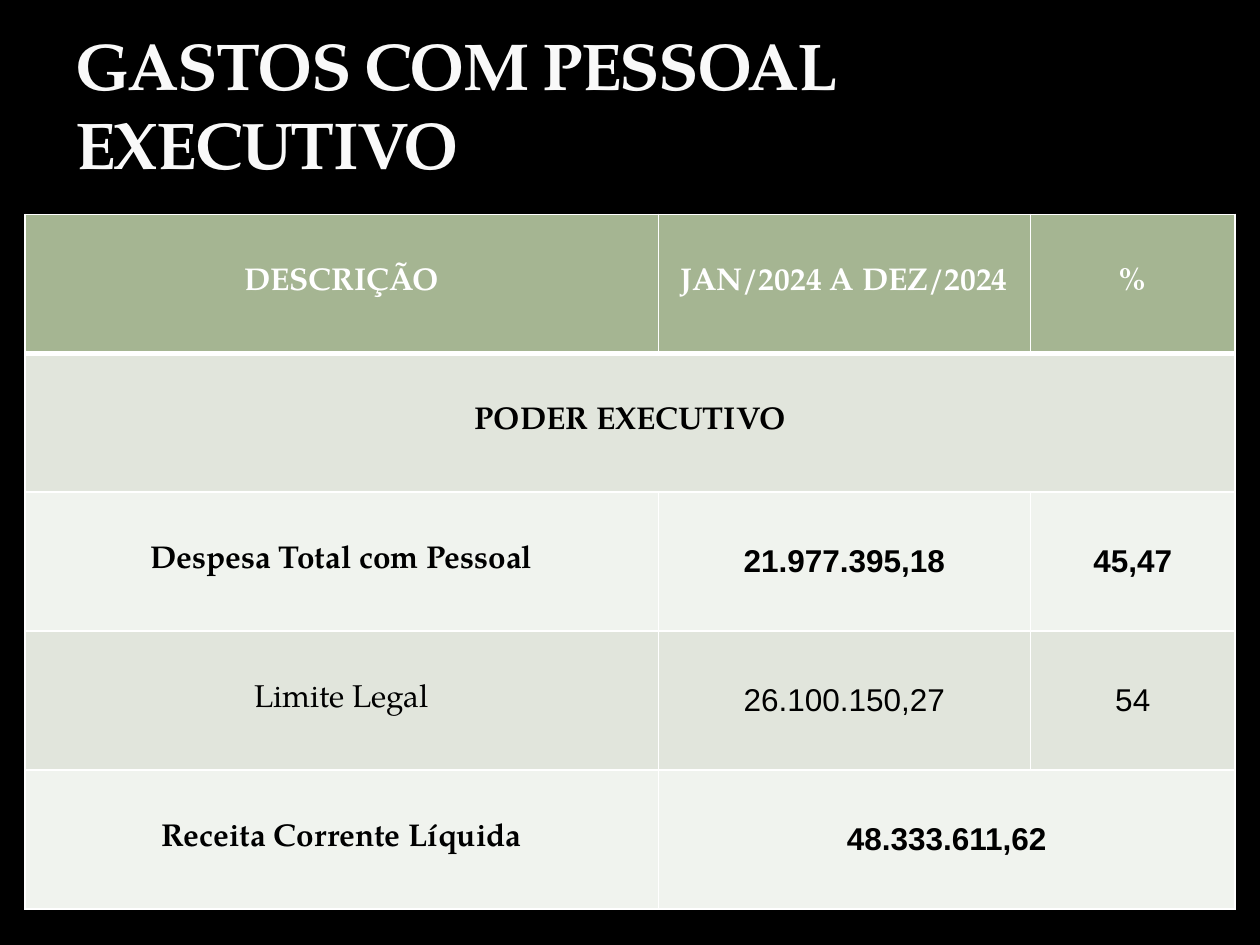
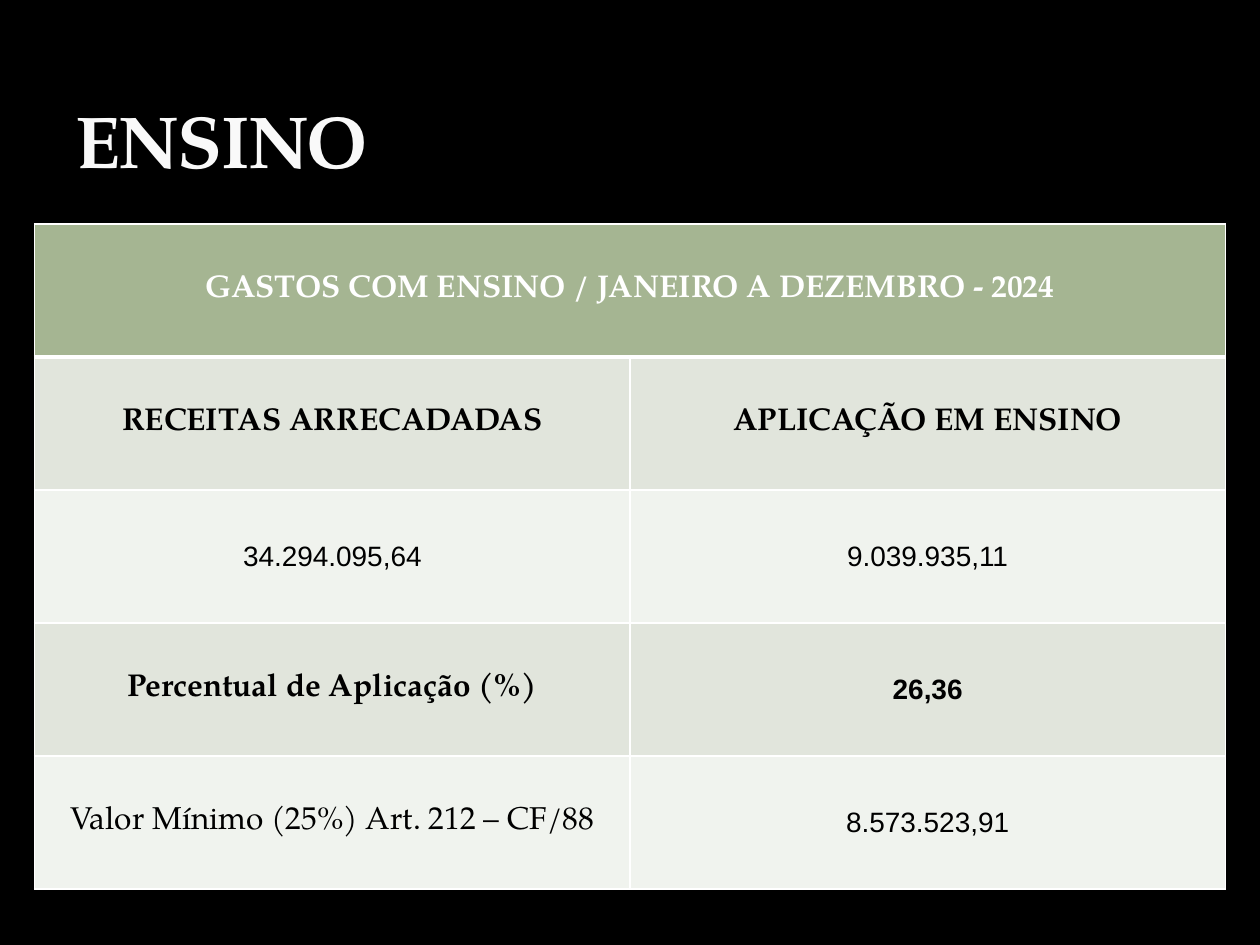
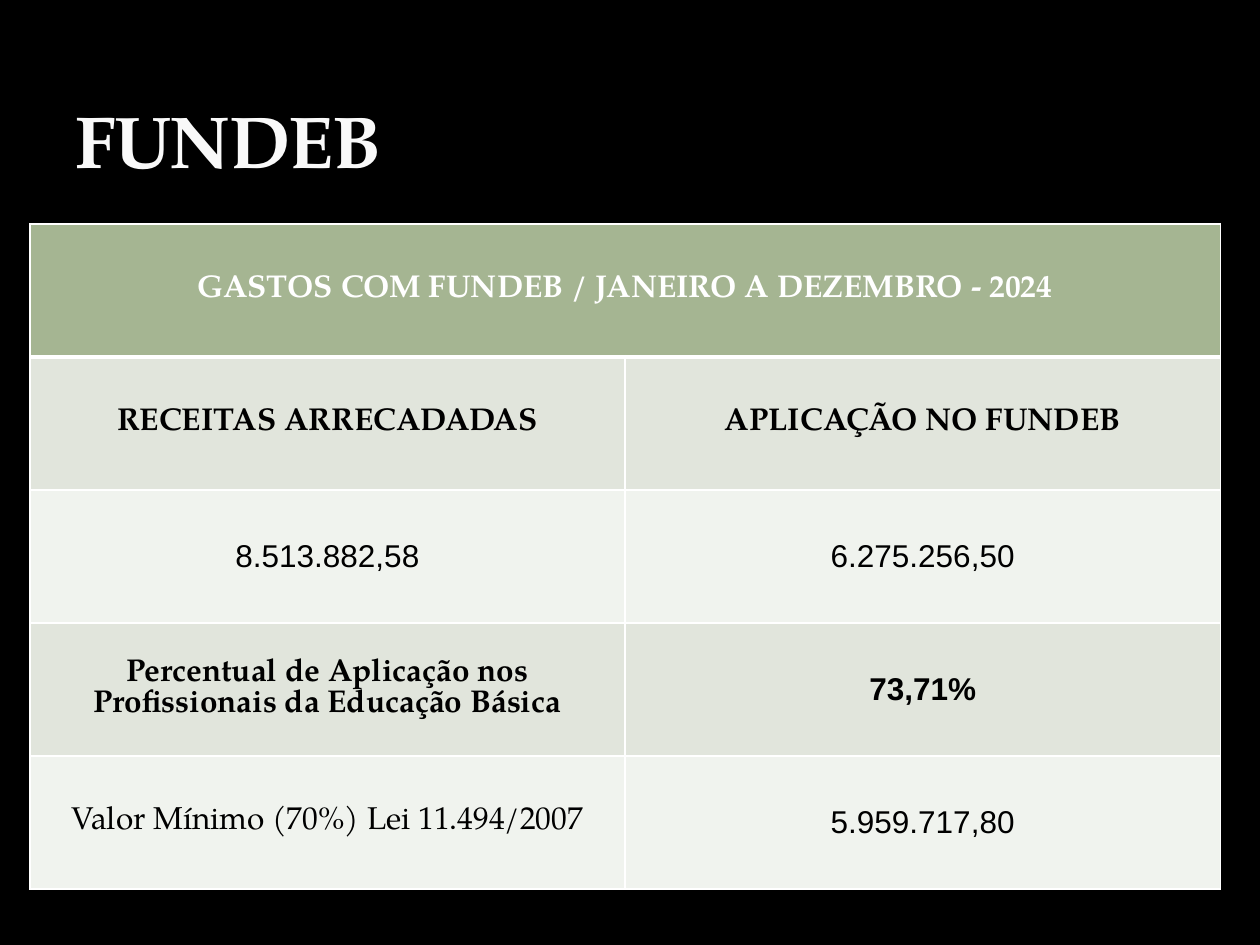
from dataclasses import dataclass

from pptx import Presentation
from pptx.dml.color import RGBColor as RGB
from pptx.enum.text import MSO_ANCHOR as Anchor, PP_ALIGN as Align
from pptx.oxml import parse_xml
from pptx.oxml.ns import nsdecls
from pptx.util import Cm, Pt


@dataclass(frozen=True)
class Theme:
    background: str = "000000"
    title: str = "F9F9F9"
    outline: str = "3C4422"
    header: str = "A5B592"
    bands: tuple = ("F0F3EE", "E1E5DC")
    light: str = "FFFFFF"
    dark: str = "000000"
    text_font: str = "TeX Gyre Pagella"
    number_font: str = "Arial"
    title_size: float = 42
    cell_size: float = 18
    rule: float = 1
    header_rule: float = 3


T = Theme()
SLIDE_SIZE = (25.4, 19.05)
TITLE_BOX = (1.27, 0.43, 22.86, 3.38)


def write(tf, text, size=T.cell_size, font=T.text_font, color=T.dark,
          bold=False, align=Align.LEFT, anchor=Anchor.MIDDLE):
    tf.word_wrap = True
    tf.vertical_anchor = anchor
    p = tf.paragraphs[0]
    p.alignment = align
    r = p.add_run()
    r.text = text
    r.font.size = Pt(size)
    r.font.name = font
    r.font.bold = bold
    r.font.color.rgb = RGB.from_string(color)
    return r


def add_title(s, box, text, size):
    tf = s.shapes.add_textbox(*map(Cm, box)).text_frame
    r = write(tf, text, size=size, color=T.title, bold=True, anchor=Anchor.BOTTOM)
    rPr = r.font._element
    rPr.set("spc", "-100")
    rPr.insert(0, parse_xml(
        f'<a:ln {nsdecls("a")} w="{Pt(0.25)}"><a:solidFill><a:srgbClr val="{T.outline}">'
        '<a:alpha val="25000"/></a:srgbClr></a:solidFill></a:ln>'))


def set_borders(cell, row):
    widths = {"L": T.rule, "R": T.rule,
              "T": T.header_rule if row == 1 else T.rule,
              "B": T.header_rule if row == 0 else T.rule}
    tcPr = cell._tc.get_or_add_tcPr()
    for side, width in widths.items():
        tcPr.append(parse_xml(
            f'<a:ln{side} {nsdecls("a")} w="{Pt(width)}"><a:solidFill>'
            f'<a:srgbClr val="{T.light}"/></a:solidFill></a:ln{side}>'))


def add_spending_table(s, box, col_widths, rows, bold_rows, number_size):
    left, top, width, height = map(Cm, box)
    tbl = s.shapes.add_table(len(rows), len(col_widths), left, top, width, height).table
    tbl.first_row = tbl.horz_banding = False
    for col, col_width in zip(tbl.columns, col_widths):
        col.width = Cm(col_width)
    for i, texts in enumerate(rows):
        tbl.rows[i].height = height // len(rows)
        for j in range(len(col_widths)):
            cell = tbl.cell(i, j)
            set_borders(cell, i)
            cell.fill.solid()
            cell.fill.fore_color.rgb = RGB.from_string(T.header if i == 0 else T.bands[i % 2])
        if len(texts) < len(col_widths):
            tbl.cell(i, len(texts) - 1).merge(tbl.cell(i, len(col_widths) - 1))
        for j, text in enumerate(texts):
            cell = tbl.cell(i, j)
            number = text[0].isdigit()
            write(cell.text_frame, text,
                  size=number_size if number else T.cell_size,
                  font=T.number_font if number else T.text_font,
                  color=T.light if i == 0 else T.dark,
                  bold=i in bold_rows, align=Align.CENTER)
            cell.vertical_anchor = Anchor.MIDDLE


def add_spending_slide(prs, title, box, col_widths, rows, bold_rows,
                       title_size=T.title_size, number_size=T.cell_size):
    s = prs.slides.add_slide(prs.slide_layouts[6])
    s.background.fill.solid()
    s.background.fill.fore_color.rgb = RGB.from_string(T.background)
    add_title(s, TITLE_BOX, title, title_size)
    add_spending_table(s, box, col_widths, rows, bold_rows, number_size)


def add_program_slide(prs, name, left, applied, income, spent, share_label, share,
                      minimum_label, minimum, number_size=T.cell_size):
    rows = [[f"GASTOS COM {name} / JANEIRO A DEZEMBRO - 2024"],
            ["RECEITAS ARRECADADAS", applied],
            [income, spent],
            [share_label, share],
            [minimum_label, minimum]]
    add_spending_slide(prs, name, (left, 4.52, 24, 13.4), (12, 12), rows,
                       bold_rows={0, 1, 3}, number_size=number_size)


def main():
    prs = Presentation()
    prs.slide_width, prs.slide_height = map(Cm, SLIDE_SIZE)
    add_spending_slide(
        prs, "GASTOS COM PESSOAL EXECUTIVO", (0.5, 4.32, 24.4, 14), (12.77, 7.5, 4.13),
        [["DESCRIÇÃO", "JAN/2024 A DEZ/2024", "%"],
         ["PODER EXECUTIVO"],
         ["Despesa Total com Pessoal", "21.977.395,18", "45,47"],
         ["Limite Legal", "26.100.150,27", "54"],
         ["Receita Corrente Líquida", "48.333.611,62"]],
        bold_rows={0, 1, 2, 4}, title_size=37.8)
    add_program_slide(
        prs, "ENSINO", 0.7, "APLICAÇÃO EM ENSINO", "34.294.095,64", "9.039.935,11",
        "Percentual de Aplicação (%)", "26,36",
        "Valor Mínimo (25%) Art. 212 – CF/88", "8.573.523,91", number_size=16)
    add_program_slide(
        prs, "FUNDEB", 0.6, "APLICAÇÃO NO FUNDEB", "8.513.882,58", "6.275.256,50",
        "Percentual de Aplicação nos Profissionais da Educação Básica", "73,71%",
        "Valor Mínimo (70%) Lei 11.494/2007", "5.959.717,80")
    prs.save("out.pptx")


if __name__ == "__main__":
    main()
